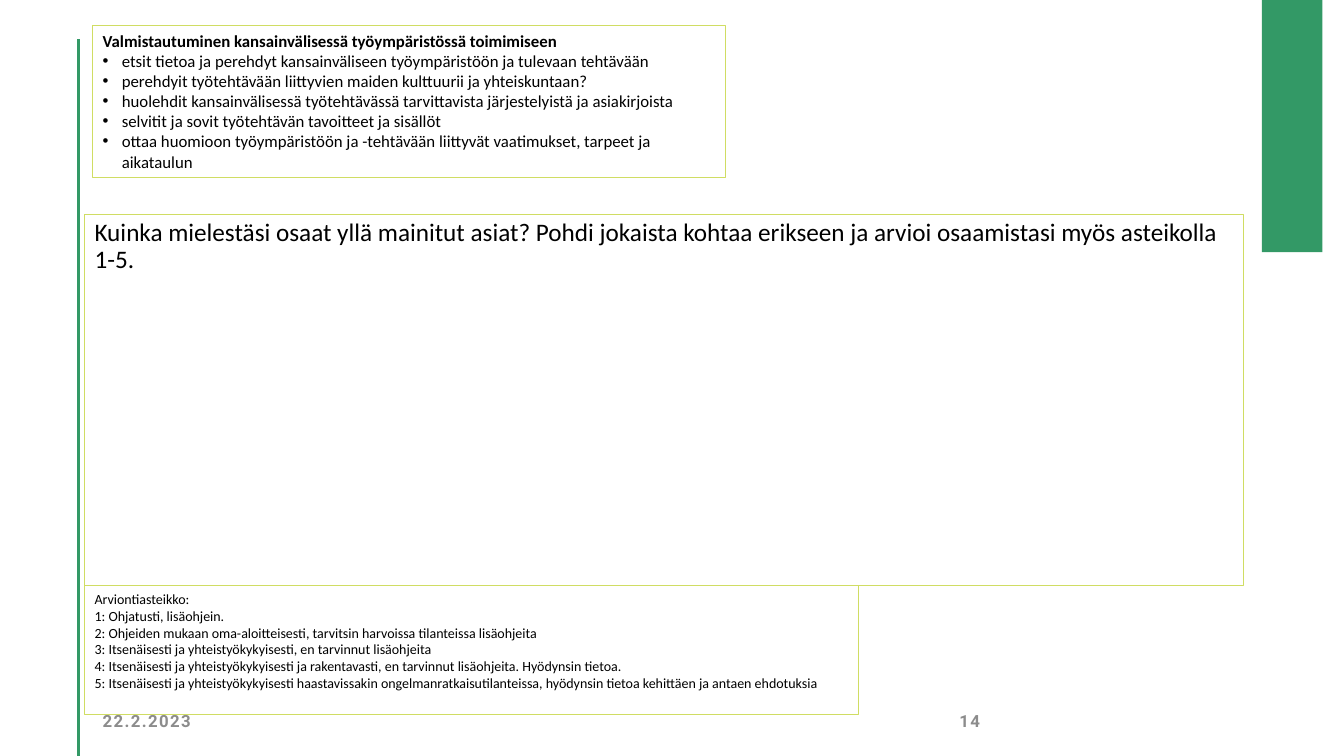
from lxml import etree
from pptx import Presentation
from pptx.dml.color import RGBColor
from pptx.enum.shapes import MSO_CONNECTOR, MSO_SHAPE
from pptx.enum.text import MSO_ANCHOR, PP_ALIGN
from pptx.oxml.ns import qn
from pptx.util import Inches, Pt

RECT, LINE = MSO_SHAPE.RECTANGLE, MSO_CONNECTOR.STRAIGHT
TOP, MIDDLE, LEFT = MSO_ANCHOR.TOP, MSO_ANCHOR.MIDDLE, PP_ALIGN.LEFT

GREEN = RGBColor(0x33, 0x99, 0x66)
LIME = RGBColor(0xD0, 0xDD, 0x63)
GREY = RGBColor(0x8C, 0x8C, 0x8C)
BLACK = RGBColor(0, 0, 0)
WHITE = RGBColor(0xFF, 0xFF, 0xFF)

WIDE, HIGH = Inches(13.33), Inches(7.5)
INDENT = Inches(0.19)

# Shared edges, in percent of the slide
FRAME_X, TEXT_X = 6.3, 6.9
TASK_Y, TASK_H = 28.4, 49.05
FOOT_Y, FOOT_H = 92.65, 5.35

BODY = {"name": "Calibri", "bold": False}
FOOT = {"name": "Roboto", "size": Pt(12), "bold": True}

GOALS_HEAD = "Valmistautuminen kansainvälisessä työympäristössä toimimiseen"
GOALS = [
    "etsit tietoa ja perehdyt kansainväliseen työympäristöön ja tulevaan tehtävään",
    "perehdyit työtehtävään liittyvien maiden kulttuurii ja yhteiskuntaan?",
    "huolehdit kansainvälisessä työtehtävässä tarvittavista järjestelyistä ja asiakirjoista",
    "selvitit ja sovit työtehtävän tavoitteet ja sisällöt",
    "ottaa huomioon työympäristöön ja -tehtävään liittyvät vaatimukset, tarpeet ja aikataulun",
]
TASK = ("Kuinka mielestäsi osaat yllä mainitut asiat? Pohdi jokaista kohtaa "
        "erikseen ja arvioi osaamistasi myös asteikolla 1-5.")
SCALE_HEAD = "Arviontiasteikko:"
SCALE = [
    "Ohjatusti, lisäohjein.",
    "Ohjeiden mukaan oma-aloitteisesti, tarvitsin harvoissa tilanteissa lisäohjeita",
    "Itsenäisesti ja yhteistyökykyisesti, en tarvinnut lisäohjeita",
    "Itsenäisesti ja yhteistyökykyisesti ja rakentavasti, en tarvinnut lisäohjeita. "
    "Hyödynsin tietoa.",
    "Itsenäisesti ja yhteistyökykyisesti haastavissakin ongelmanratkaisutilanteissa, "
    "hyödynsin tietoa kehittäen ja antaen ehdotuksia",
]


def place(x, y, w, h):
    """Turn percent of the slide into lengths."""
    return [int(side * part / 100)
            for side, part in zip((WIDE, HIGH, WIDE, HIGH), (x, y, w, h))]


def style(font, form, color):
    for key, value in form.items():
        setattr(font, key, value)
    font.color.rgb = color


def bullet(para):
    props = para._p.get_or_add_pPr()
    props.set("marL", str(INDENT))
    props.set("indent", str(-INDENT))
    etree.SubElement(props, qn("a:buFont")).set("typeface", "Arial")
    etree.SubElement(props, qn("a:buChar")).set("char", "•")


def panel(slide, box, fill=None, line=None):
    shape = slide.shapes.add_shape(RECT, *place(*box))
    shape.shadow.inherit = False
    if fill is None:
        shape.fill.background()
    else:
        shape.fill.solid()
        shape.fill.fore_color.rgb = fill
    if line is None:
        shape.line.fill.background()
    else:
        shape.line.color.rgb = line
        shape.line.width = Pt(0.75)
    return shape


def write(shape, lines, form, color=BLACK, anchor=TOP):
    """Fill a shape with one paragraph per line."""
    frame = shape.text_frame
    frame.word_wrap = True
    frame.vertical_anchor = anchor
    for at, line in enumerate(lines):
        para = frame.add_paragraph() if at else frame.paragraphs[0]
        para.alignment = LEFT
        run = para.add_run()
        run.text = line
        style(run.font, form, color)
    return frame.paragraphs


def rule(slide, x, top, end):
    start = place(x, top, x, end)
    line = slide.shapes.add_connector(LINE, *start)
    line.line.color.rgb = GREEN
    line.line.width = Pt(2)
    etree.SubElement(line._element.spPr, qn("a:effectLst"))


def footer(slide, x, w, text):
    box = slide.shapes.add_textbox(*place(x, FOOT_Y, w, FOOT_H))
    para = write(box, [text], FOOT, GREY, MIDDLE)[0]
    para.runs[0]._r.get_or_add_rPr().set("spc", "100")


def main():
    deck = Presentation()
    deck.slide_width, deck.slide_height = WIDE, HIGH
    slide = deck.slides.add_slide(deck.slide_layouts[6])

    # Green edge marks
    rule(slide, 5.85, 5.2, 100)
    panel(slide, (93.9, 0, 4.5, 33.35), fill=GREEN)

    # Question with room for the answer
    task = panel(slide, (FRAME_X, TASK_Y, 86.25, TASK_H), line=LIME)
    write(task, [TASK], {**BODY, "size": Pt(18)})[0].line_spacing = 0.9

    # Date and page number
    footer(slide, TEXT_X, 22.5, "22.2.2023")
    footer(slide, 70.65, 19.05, "14")

    # Grading scale, right below the question
    scale = panel(slide, (FRAME_X, TASK_Y + TASK_H, 57.55, 17.05), line=LIME)
    grades = [f"{grade}: {text}" for grade, text in enumerate(SCALE, 1)]
    write(scale, [SCALE_HEAD, *grades], {**BODY, "size": Pt(10)})

    # Goals with a bold heading
    goals = panel(slide, (TEXT_X, 3.35, 47.1, 20.15), WHITE, LIME)
    head, *items = write(goals, [GOALS_HEAD, *GOALS], {**BODY, "size": Pt(12)})
    head.runs[0].font.bold = True
    for item in items:
        bullet(item)

    deck.save("out.pptx")


if __name__ == "__main__":
    main()
